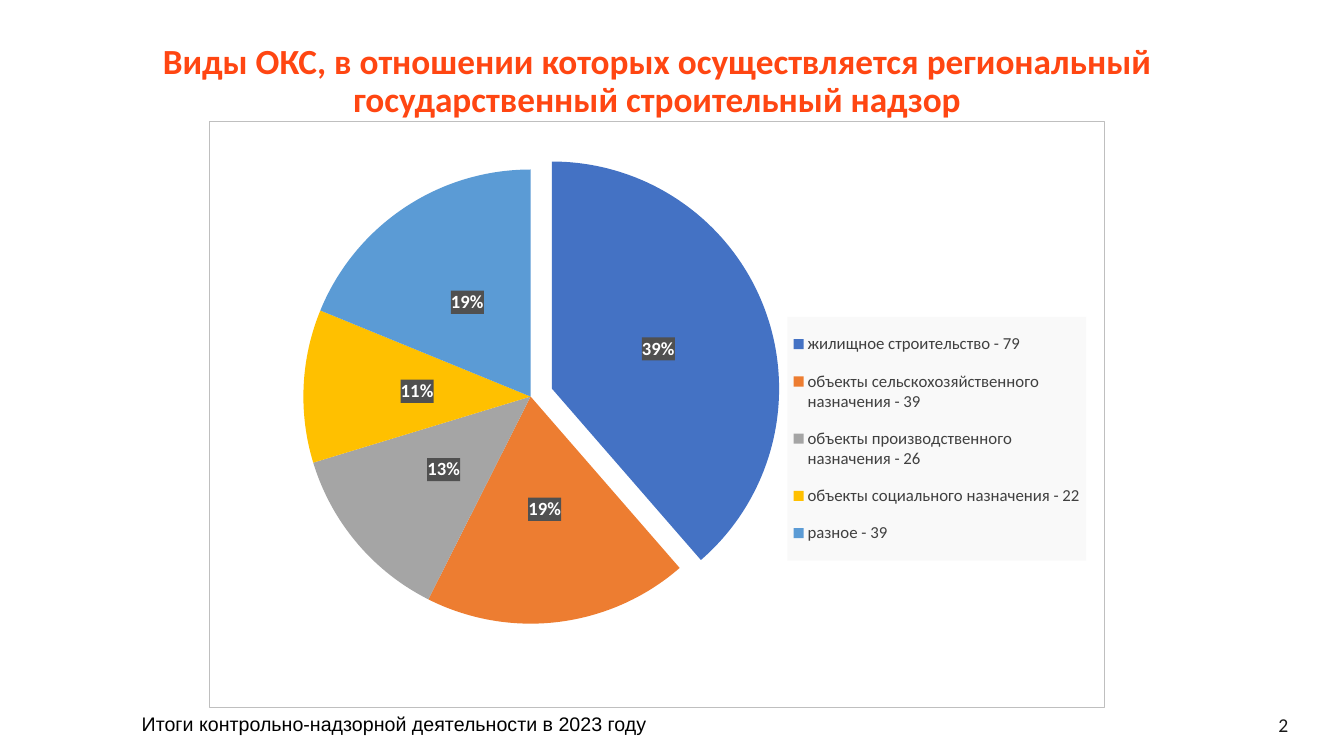
from dataclasses import dataclass

from pptx import Presentation
from pptx.chart.data import CategoryChartData
from pptx.dml.color import RGBColor
from pptx.enum.chart import XL_CHART_TYPE, XL_LABEL_POSITION as LabelPos, XL_LEGEND_POSITION as LegendPos
from pptx.enum.text import MSO_ANCHOR as Anchor, MSO_AUTO_SIZE as AutoSize, PP_ALIGN as Align
from pptx.oxml import parse_xml
from pptx.oxml.ns import nsdecls, qn
from pptx.util import Pt

PX = 9525  # EMU in one px
PAGE = (1280, 720)


@dataclass(frozen=True)
class Theme:
    heading_font: str = "Calibri"
    footer_font: str = "Arial"
    heading: str = "FF4612"
    footer: str = "000000"
    page_number: str = "1A1A1A"
    legend_text: str = "404040"
    legend_fill: str = "F9F9F9"
    label_text: str = "FFFFFF"
    label_fill: str = "505050"
    border: str = "BFBFBF"
    slices: tuple = ("4472C4", "ED7D31", "A5A5A5", "FFC000", "5B9BD5")
    heading_size: float = 25.2
    footer_size: float = 14
    chart_size: float = 10
    legend_size: float = 12
    label_size: float = 13.3


def assign(target, values):
    for name, value in values.items():
        setattr(target, name, value)


def set_font(font, name, size, color, bold=False):
    assign(font, {"name": name, "size": Pt(size), "bold": bold})
    font.color.rgb = RGBColor.from_string(color)


def fill_and_line(fill=None, line=None):
    """Chart-part formatting with an optional fill and thin outline."""
    def paint(color):
        return f'<a:solidFill><a:srgbClr val="{color}"/></a:solidFill>' if color else "<a:noFill/>"
    return parse_xml(f'<c:spPr {nsdecls("c", "a")}>{paint(fill)}'
                     f'<a:ln w="{Pt(0.75)}">{paint(line)}</a:ln></c:spPr>')


def manual_layout(x, y, w, h, inner=False):
    target = '<c:layoutTarget val="inner"/>' if inner else ""
    sizes = "".join(f'<c:{key} val="{value}"/>' for key, value in zip("xywh", (x, y, w, h)))
    return parse_xml(f'<c:layout {nsdecls("c")}><c:manualLayout>{target}<c:xMode val="edge"/>'
                     f'<c:yMode val="edge"/>{sizes}</c:manualLayout></c:layout>')


class SlideBuilder:
    def __init__(self, slide, theme):
        self.slide, self.theme = slide, theme

    def box(self, left, top, width, height):
        return [value * PX for value in (left, top, width, height)]

    def title(self, text, *place):
        heading = self.slide.shapes.title
        assign(heading, dict(zip(("left", "top", "width", "height"), self.box(*place))))
        assign(heading.text_frame, {"text": text, "word_wrap": True, "auto_size": AutoSize.NONE,
                                    "vertical_anchor": Anchor.MIDDLE})
        line = heading.text_frame.paragraphs[0]
        assign(line, {"alignment": Align.CENTER, "line_spacing": 0.9})
        set_font(line.runs[0].font, self.theme.heading_font, self.theme.heading_size,
                 self.theme.heading, True)

    def note(self, text, *place, font, color, align=Align.LEFT, anchor=Anchor.TOP):
        frame = self.slide.shapes.add_textbox(*self.box(*place)).text_frame
        assign(frame, {"text": text, "word_wrap": True, "vertical_anchor": anchor,
                       "margin_left": 0, "margin_right": 0, "margin_top": 0, "margin_bottom": 0})
        line = frame.paragraphs[0]
        line.alignment = align
        set_font(line.runs[0].font, font, self.theme.footer_size, color)

    def pie(self, shares, *place):
        theme = self.theme
        data = CategoryChartData()
        data.categories = list(shares)
        data.add_series("Series 1", list(shares.values()))
        chart = self.slide.shapes.add_chart(XL_CHART_TYPE.PIE, *self.box(*place), data).chart
        assign(chart, {"has_title": False, "has_legend": True})
        set_font(chart.font, theme.heading_font, theme.chart_size, theme.footer)
        root = chart.element

        # Slices, the first one pulled out
        plot = chart.plots[0]
        plot.vary_by_categories = True
        series = plot.series[0]
        for index, color in enumerate(theme.slices):
            piece = series.points[index].format.fill
            piece.solid()
            piece.fore_color.rgb = RGBColor.from_string(color)
        first_slice = root.find(".//" + qn("c:dPt"))
        first_slice.find(qn("c:idx")).addnext(parse_xml(f'<c:explosion {nsdecls("c")} val="10"/>'))

        # Percent labels
        labels = series.data_labels
        assign(labels, {"show_percentage": True, "show_value": False, "position": LabelPos.CENTER,
                        "number_format": "0%", "number_format_is_linked": False})
        set_font(labels.font, theme.heading_font, theme.label_size, theme.label_text, True)
        root.find(".//" + qn("c:dLbls")).find(qn("c:txPr")).addprevious(fill_and_line(theme.label_fill))

        # Legend
        assign(chart.legend, {"position": LegendPos.RIGHT, "include_in_layout": False})
        set_font(chart.legend.font, theme.heading_font, theme.legend_size, theme.legend_text)
        legend = root.find(".//" + qn("c:legend"))
        legend.find(qn("c:txPr")).addprevious(fill_and_line(theme.legend_fill))

        # Placement and frame
        plot_area = root.find(".//" + qn("c:plotArea"))
        for part in (plot_area, legend):
            for layout in part.findall(qn("c:layout")):
                part.remove(layout)
        plot_area.insert(0, manual_layout(0.105, 0.082, 0.508, 0.776, inner=True))
        legend.find(qn("c:legendPos")).addnext(manual_layout(0.646, 0.334, 0.334, 0.416))
        root.find(qn("c:chart")).addnext(fill_and_line(line=theme.border))


def main():
    deck = Presentation()
    deck.slide_width, deck.slide_height = (side * PX for side in PAGE)
    theme = Theme()
    page = SlideBuilder(deck.slides.add_slide(deck.slide_layouts[5]), theme)

    # Footer
    page.note("2", 1203, 679, 24, 23, font=theme.heading_font, color=theme.page_number,
              align=Align.RIGHT, anchor=Anchor.MIDDLE)
    page.note("Итоги контрольно-надзорной деятельности в 2023 году", 135, 678, 1000, 23,
              font=theme.footer_font, color=theme.footer)

    # Heading and chart
    page.title("Виды ОКС, в отношении которых осуществляется региональный "
               "государственный строительный надзор", 56, 42, 1140, 73)
    page.pie({
        "жилищное строительство - 79": 39,
        "объекты сельскохозяйственного назначения - 39": 19,
        "объекты производственного назначения - 26": 13,
        "объекты социального назначения - 22": 11,
        "разное - 39": 19,
    }, 199, 115, 853, 559)
    deck.save("out.pptx")


if __name__ == "__main__":
    main()
